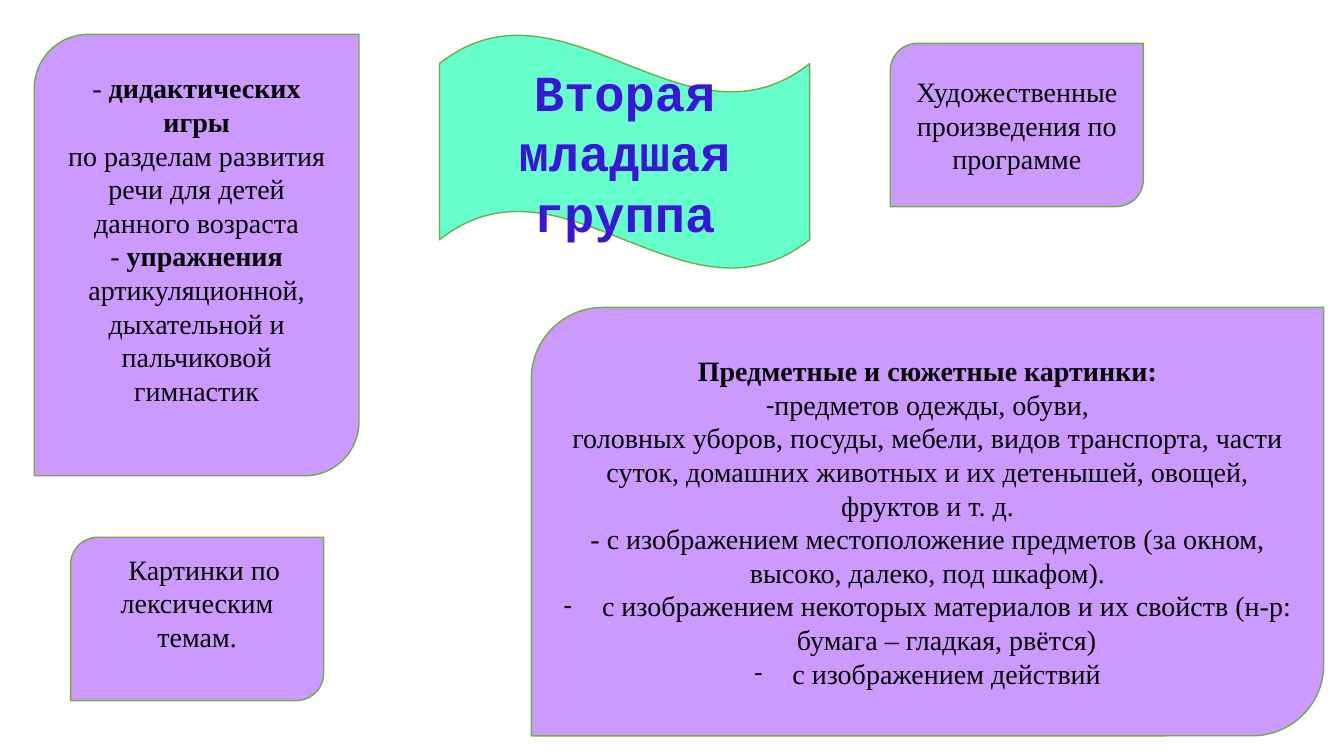
"""Build the slide of speech materials for the second junior group."""
from lxml import etree
from pptx import Presentation, util as u
from pptx.dml.color import RGBColor
from pptx.enum import shapes, text
from pptx.oxml import ns

PX = 9144
LILAC = RGBColor(0xCC, 0x99, 0xFF)
MINT = RGBColor(0x66, 0xFF, 0xCC)
GREEN = RGBColor(0x70, 0xAD, 0x47)
INDIGO = RGBColor(0x3A, 0x15, 0xD9)
BLACK = RGBColor(0, 0, 0)

BODY = {"name": "Times New Roman", "size": u.Pt(20), "bold": False}
HEADING = {"name": "Courier New", "size": u.Pt(36), "bold": True}
BOLD = {"bold": True}
CALIBRI = {"name": "Calibri"}
FRAME = {"word_wrap": True, "auto_size": text.MSO_AUTO_SIZE.NONE,
         "vertical_anchor": text.MSO_ANCHOR.MIDDLE}
CENTRED = {"alignment": text.PP_ALIGN.CENTER, "line_spacing": 1.0}

TITLE = "Вторая младшая группа"
TITLE_PLACE = (436, 34, 367, 233)

GAMES = [[
    ("- ", {}), ("дидактических игры\n", BOLD),
    ("по разделам развития речи для детей данного возраста\n- ", {}),
    ("упражнения ", BOLD),
    ("артикуляционной,\nдыхательной и\nпальчиковой гимнастик", {}),
]]
BOOKS = [[("Художественные произведения по программе", {})]]
PICTURES = [
    [("Предметные и сюжетные картинки:\n", BOLD), ("-", CALIBRI),
     ("предметов одежды, обуви,", {})],
    [("головных уборов, посуды, мебели, видов транспорта, части суток, "
      "домашних животных и их детенышей, овощей, фруктов и т. д.", {})],
    [("- с изображением местоположение предметов "
      "(за окном, высоко, далеко, под шкафом).", {})],
    [("с изображением некоторых материалов и их свойств "
      "(н-р: бумага – гладкая, рвётся)", {})],
    [("с изображением действий", {})],
]
TOPICS = [[("Картинки по лексическим темам.", {})]]


def set_all(target, values):
    """Set each named attribute of the target."""
    for name, value in values.items():
        setattr(target, name, value)


def place(item, left, top, width, height):
    """Move and size an item in px."""
    set_all(item, {"left": left * PX, "top": top * PX,
                   "width": width * PX, "height": height * PX})


def add_panel(page, kind, area, colour):
    """Add a filled preset shape with a green outline."""
    panel = page.shapes.add_shape(kind, *(length * PX for length in area))
    panel.shadow.inherit = False
    panel.fill.solid()
    panel.fill.fore_color.rgb = colour
    panel.line.color.rgb = GREEN
    panel.line.width = u.Pt(1)
    return panel


def add_spans(para, spans, style, colour):
    """Write formatted spans, with line breaks at newlines."""
    set_all(para, CENTRED)
    for words, changes in spans:
        for number, line in enumerate(words.split("\n")):
            if number:
                para.add_line_break()
            if line:
                span = para.add_run()
                span.text = line
                set_all(span.font, {**style, **changes})
                span.font.color.rgb = colour


def add_dash(para):
    """Give a paragraph a hanging dash bullet."""
    props = para._p.get_or_add_pPr()
    props.set("marL", str(38 * PX))
    props.set("indent", str(-38 * PX))
    etree.SubElement(props, ns.qn("a:buFont")).set("typeface", "Calibri")
    etree.SubElement(props, ns.qn("a:buChar")).set("char", "-")


def add_card(page, area, paras, lift=0, indent=0, dashed=0):
    """Add a lilac card; the last dashed paragraphs get bullets."""
    card = add_panel(page, shapes.MSO_SHAPE.ROUND_2_DIAG_RECTANGLE, area, LILAC)
    frame = card.text_frame
    set_all(frame, {**FRAME, "margin_bottom": (5 + lift) * PX})
    for number, spans in enumerate(paras):
        para = frame.add_paragraph() if number else frame.paragraphs[0]
        if number >= len(paras) - dashed:
            add_dash(para)
        elif indent:
            para._p.get_or_add_pPr().set("indent", str(indent * PX))
        add_spans(para, spans, BODY, BLACK)


def add_title(page):
    """Put the title placeholder in front of a mint wave."""
    title = page.shapes.title
    wave = add_panel(page, shapes.MSO_SHAPE.WAVE, TITLE_PLACE, MINT)
    title._element.addprevious(wave._element)
    place(title, *TITLE_PLACE)
    set_all(title.text_frame, FRAME)
    add_spans(title.text_frame.paragraphs[0], [(TITLE, {})], HEADING, INDIGO)


def main():
    """Build and save the deck."""
    deck = Presentation()
    set_all(deck, {"slide_width": 1333 * PX, "slide_height": 750 * PX})
    page = deck.slides.add_slide(deck.slide_layouts.get_by_name("Title Only"))
    add_title(page)
    add_card(page, (34, 34, 322, 438), GAMES, lift=32)
    add_card(page, (883, 43, 251, 162), BOOKS)
    add_card(page, (527, 305, 786, 425), PICTURES, dashed=2)
    add_card(page, (70, 533, 251, 162), TOPICS, lift=32, indent=14)
    deck.save("out.pptx")


if __name__ == "__main__":
    main()
